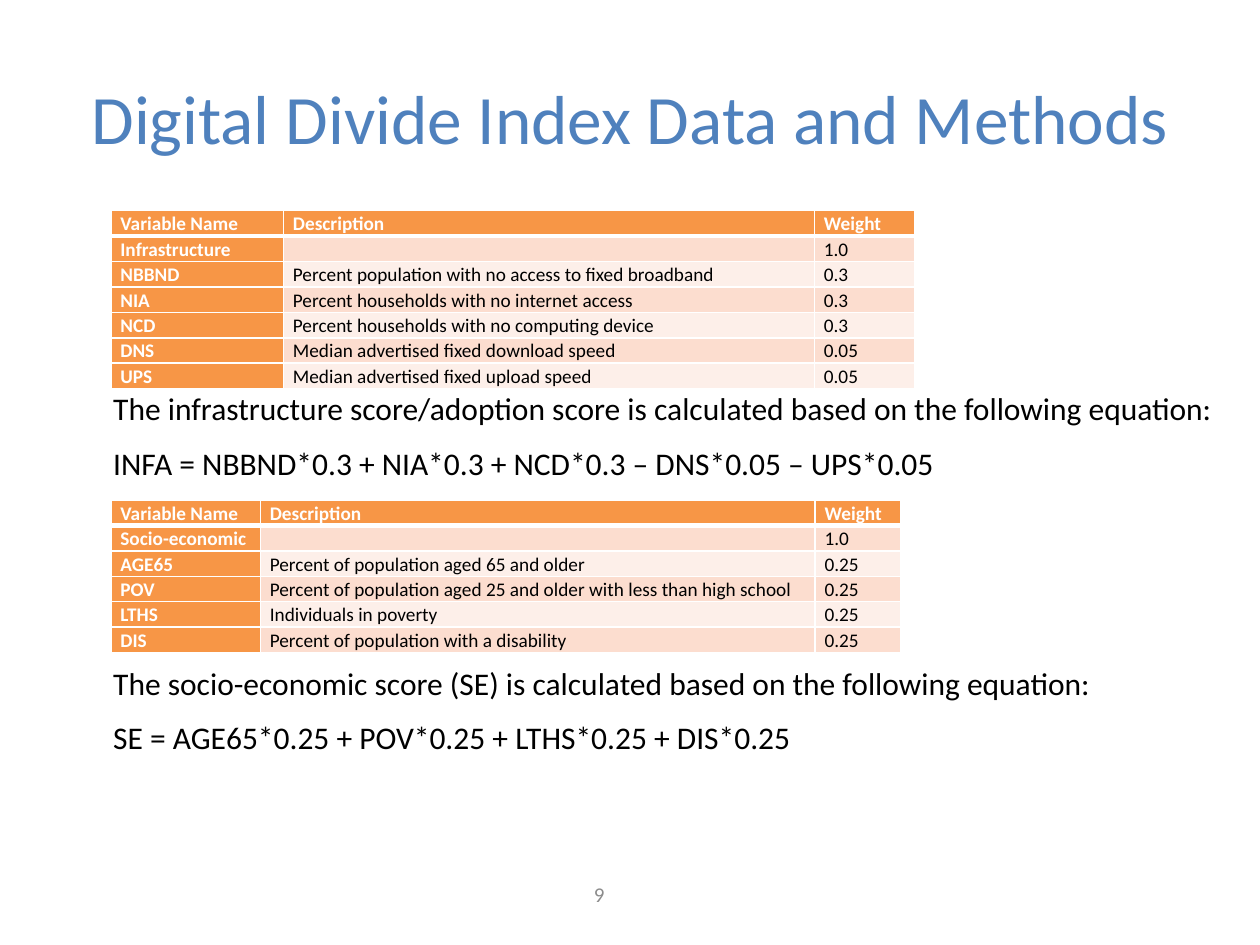
"""Builds the Digital Divide Index data and methods slide."""
from lxml import etree
from pptx import Presentation
from pptx.dml.color import RGBColor
from pptx.enum.text import MSO_ANCHOR, MSO_AUTO_SIZE, PP_ALIGN
from pptx.oxml.ns import qn
from pptx.util import Pt

CENTER = PP_ALIGN.CENTER
MIDDLE = MSO_ANCHOR.MIDDLE
GROW = MSO_AUTO_SIZE.SHAPE_TO_FIT_TEXT
FIXED = MSO_AUTO_SIZE.NONE
TITLE_ONLY = 5

HEADER = ("Variable Name", "Description", "Weight")
INFRASTRUCTURE = [
    HEADER,
    ("Infrastructure", "", "1.0"),
    ("NBBND", "Percent population with no access to fixed broadband", "0.3"),
    ("NIA", "Percent households with no internet access", "0.3"),
    ("NCD", "Percent households with no computing device", "0.3"),
    ("DNS", "Median advertised fixed download speed", "0.05"),
    ("UPS", "Median advertised fixed upload speed", "0.05"),
]
SOCIOECONOMIC = [
    HEADER,
    ("Socio-economic", "", "1.0"),
    ("AGE65", "Percent of population aged 65 and older", "0.25"),
    ("POV", "Percent of population aged 25 and older with less than high school", "0.25"),
    ("LTHS", "Individuals in poverty", "0.25"),
    ("DIS", "Percent of population with a disability", "0.25"),
]
INFRASTRUCTURE_NOTE = [
    "The infrastructure score/adoption score is calculated based on the following equation:",
    "INFA = NBBND*0.3 + NIA*0.3 + NCD*0.3 – DNS*0.05 – UPS*0.05",
]
SOCIOECONOMIC_NOTE = [
    "The socio-economic score (SE) is calculated based on the following equation:",
    "SE = AGE65*0.25 + POV*0.25 + LTHS*0.25 + DIS*0.25",
]


def color(value):
    return RGBColor.from_string(value)


class SlideBuilder:
    font = "Calibri"
    blue, orange, white, black, gray = "4F81BD", "F79646", "FFFFFF", "000000", "8C8C8C"
    bands = ("FDEFE9", "FCDDCF")
    cell_size = 11
    row_height = 14.46
    line_spacing = 1.07

    def __init__(self, slide):
        self.slide = slide

    def style(self, paragraph, size, ink, bold=False):
        for run in paragraph.runs:
            run.font.name = self.font
            run.font.size = Pt(size)
            run.font.bold = bold
            run.font.color.rgb = color(ink)

    def place(self, shape, left, top, width, height):
        shape.left, shape.top = Pt(left), Pt(top)
        shape.width, shape.height = Pt(width), Pt(height)

    def title(self, text, *box):
        shape = self.slide.shapes.title
        self.place(shape, *box)
        frame = shape.text_frame
        frame.text = text
        frame.auto_size = FIXED
        frame.vertical_anchor = MIDDLE
        frame.paragraphs[0].alignment = CENTER
        self.style(frame.paragraphs[0], 39.6, self.blue)

    def text_box(self, *box):
        frame = self.slide.shapes.add_textbox(*map(Pt, box)).text_frame
        frame.word_wrap = True
        return frame

    def note(self, lines, *box):
        frame = self.text_box(*box)
        frame.auto_size = GROW
        frame.text = "\n".join(lines)
        for paragraph in frame.paragraphs:
            paragraph.line_spacing = self.line_spacing
            paragraph.space_after = Pt(8)
            self.style(paragraph, 18, self.black)

    def page_number(self, text, *box):
        frame = self.text_box(*box)
        frame.vertical_anchor = MIDDLE
        frame.text = text
        frame.paragraphs[0].alignment = CENTER
        self.style(frame.paragraphs[0], 12, self.gray)

    def borders(self, cell, top, bottom):
        properties = cell._tc.get_or_add_tcPr()
        sides = (("a:lnL", 1), ("a:lnR", 1), ("a:lnT", top), ("a:lnB", bottom))
        for index, (tag, width) in enumerate(sides):
            line = etree.Element(qn(tag), w=str(Pt(width)))
            fill = etree.SubElement(line, qn("a:solidFill"))
            etree.SubElement(fill, qn("a:srgbClr"), val=self.white)
            properties.insert(index, line)

    def cell(self, cell, text, row, column):
        strong = row == 0 or column == 0
        cell.margin_left = cell.margin_right = Pt(5.4)
        cell.margin_top = cell.margin_bottom = 0
        cell.fill.solid()
        cell.fill.fore_color.rgb = color(self.orange if strong else self.bands[row % 2])
        self.borders(cell, 3 if row == 1 else 1, 3 if row == 0 else 1)
        cell.text_frame.text = text
        paragraph = cell.text_frame.paragraphs[0]
        paragraph.line_spacing = self.line_spacing
        self.style(paragraph, self.cell_size, self.white if strong else self.black, strong)
        if not text:
            etree.SubElement(paragraph._p, qn("a:endParaRPr"), sz=str(self.cell_size * 100))

    def table(self, rows, left, top, widths):
        height = self.row_height * len(rows)
        frame = self.slide.shapes.add_table(
            len(rows), len(widths), Pt(left), Pt(top), Pt(sum(widths)), Pt(height))
        table = frame.table
        table.first_col = True
        for column, width in zip(table.columns, widths):
            column.width = Pt(width)
        for row, values in enumerate(rows):
            table.rows[row].height = Pt(self.row_height)
            for column, text in enumerate(values):
                self.cell(table.cell(row, column), text, row, column)


def main():
    presentation = Presentation()
    presentation.slide_width, presentation.slide_height = Pt(720), Pt(540)
    layout = presentation.slide_layouts[TITLE_ONLY]
    builder = SlideBuilder(presentation.slides.add_slide(layout))
    builder.title("Digital Divide Index Data and Methods", 36, 21.6, 648, 90)
    builder.table(INFRASTRUCTURE, 63.4, 120.3, (98.6, 303.4, 57.4))
    builder.page_number("9", 258.5, 496.8, 167.8, 28.8)
    builder.table(SOCIOECONOMIC, 63.4, 286, (85.4, 317, 49))
    builder.note(INFRASTRUCTURE_NOTE, 57.6, 217.4, 649.4, 60.5)
    builder.note(SOCIOECONOMIC_NOTE, 57.6, 374.4, 639.4, 61.9)
    presentation.save("out.pptx")


if __name__ == "__main__":
    main()
